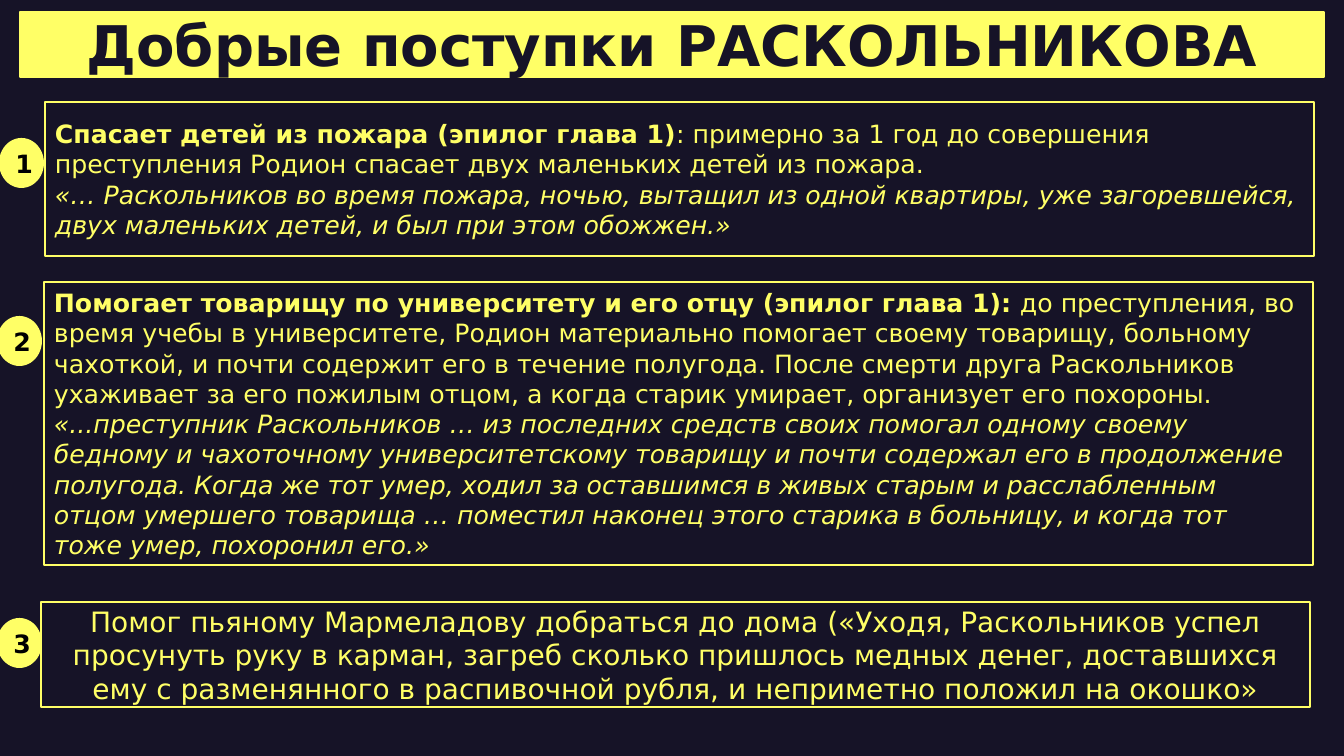
from pptx import Presentation
from pptx import util as u
from pptx.dml.color import RGBColor
from pptx.enum import shapes, text

THEME = {
    "font": "DejaVu Sans",
    "night": RGBColor.from_string("161327"),
    "yellow": RGBColor.from_string("FFFF66"),
    "black": RGBColor.from_string("000000"),
    "title": 40,
    "body": 18,
    "large": 20,
}
PX = 914400 / 100.8  # EMU in one px
BOX_WIDTH = 1269
BADGE_WIDTH, BADGE_HEIGHT = 45, 50


def px(*lengths):
    return [u.Emu(round(length * PX)) for length in lengths]


def write(shape, paragraphs, size, color, align):
    """Fill a shape with paragraphs, each a list of (words, bold, italic) runs."""
    frame = shape.text_frame
    frame.word_wrap = True
    frame.auto_size = text.MSO_AUTO_SIZE.NONE
    frame.vertical_anchor = text.MSO_ANCHOR.MIDDLE
    for index, runs in enumerate(paragraphs):
        paragraph = frame.add_paragraph() if index else frame.paragraphs[0]
        paragraph.alignment = align
        for words, bold, italic in runs:
            run = paragraph.add_run()
            run.text = words
            font = run.font
            font.name, font.size = THEME["font"], u.Pt(size)
            font.bold, font.italic = bold, italic
            font.color.rgb = color


LEFT, CENTER = text.PP_ALIGN.LEFT, text.PP_ALIGN.CENTER

# Deeds: box left, top, height; badge left, top; size; alignment; paragraphs
deeds = [
    (45, 102, 154, -1, 138, THEME["body"], LEFT, [
        [("Спасает детей из пожара (эпилог глава 1)", True, False),
         (": примерно за 1 год до совершения преступления Родион спасает двух "
          "маленьких детей из пожара.", False, False)],
        [("«… Раскольников во время пожара, ночью, вытащил из одной квартиры, "
          "уже загоревшейся, двух маленьких детей, и был при этом обожжен.»",
          False, True)],
    ]),
    (44, 282, 283, -3, 316, THEME["body"], LEFT, [
        [("Помогает товарищу по университету и его отцу (эпилог глава 1):",
          True, False),
         (" до преступления, во время учебы в университете, Родион материально "
          "помогает своему товарищу, больному чахоткой, и почти содержит его в "
          "течение полугода. После смерти друга Раскольников ухаживает за его "
          "пожилым отцом, а когда старик умирает, организует его похороны.",
          False, False)],
        [("«...преступник Раскольников … из последних средств своих помогал "
          "одному своему бедному и чахоточному университетскому товарищу и "
          "почти содержал его в продолжение полугода. Когда же тот умер, ходил "
          "за оставшимся в живых старым и расслабленным отцом умершего товарища "
          "… поместил наконец этого старика в больницу, и когда тот тоже умер, "
          "похоронил его.»", False, True)],
    ]),
    (41, 602, 105, -3, 618, THEME["large"], CENTER, [
        [("Помог пьяному Мармеладову добраться до дома («Уходя, Раскольников "
          "успел просунуть руку в карман, загреб сколько пришлось медных денег, "
          "доставшихся ему с разменянного в распивочной рубля, и неприметно "
          "положил на окошко»", False, False)],
    ]),
]

# Slide and background
presentation = Presentation()
presentation.slide_width, presentation.slide_height = px(1344, 756)
slide = presentation.slides.add_slide(presentation.slide_layouts[5])
slide.background.fill.solid()
slide.background.fill.fore_color.rgb = THEME["night"]

# Title band
title = slide.shapes.title
title.left, title.top, title.width, title.height = px(20, 12, 1304, 65)
title.fill.solid()
title.fill.fore_color.rgb = THEME["yellow"]
title.line.color.rgb = THEME["yellow"]
title.line.width = u.Pt(1)
write(title, [[("Добрые поступки РАСКОЛЬНИКОВА", True, False)]],
      THEME["title"], THEME["night"], CENTER)

# Framed deeds with numbered badges
for number, deed in enumerate(deeds, start=1):
    left, top, height, badge_left, badge_top, size, align, paragraphs = deed

    box = slide.shapes.add_shape(shapes.MSO_SHAPE.RECTANGLE,
                                 *px(left, top, BOX_WIDTH, height))
    box.shadow.inherit = False
    box.fill.background()
    box.line.color.rgb = THEME["yellow"]
    box.line.width = u.Pt(1)
    write(box, paragraphs, size, THEME["yellow"], align)

    badge = slide.shapes.add_shape(
        shapes.MSO_SHAPE.OVAL,
        *px(badge_left, badge_top, BADGE_WIDTH, BADGE_HEIGHT))
    badge.shadow.inherit = False
    badge.fill.solid()
    badge.fill.fore_color.rgb = THEME["yellow"]
    badge.line.fill.background()
    write(badge, [[(str(number), True, False)]],
          THEME["body"], THEME["black"], CENTER)

presentation.save("out.pptx")
